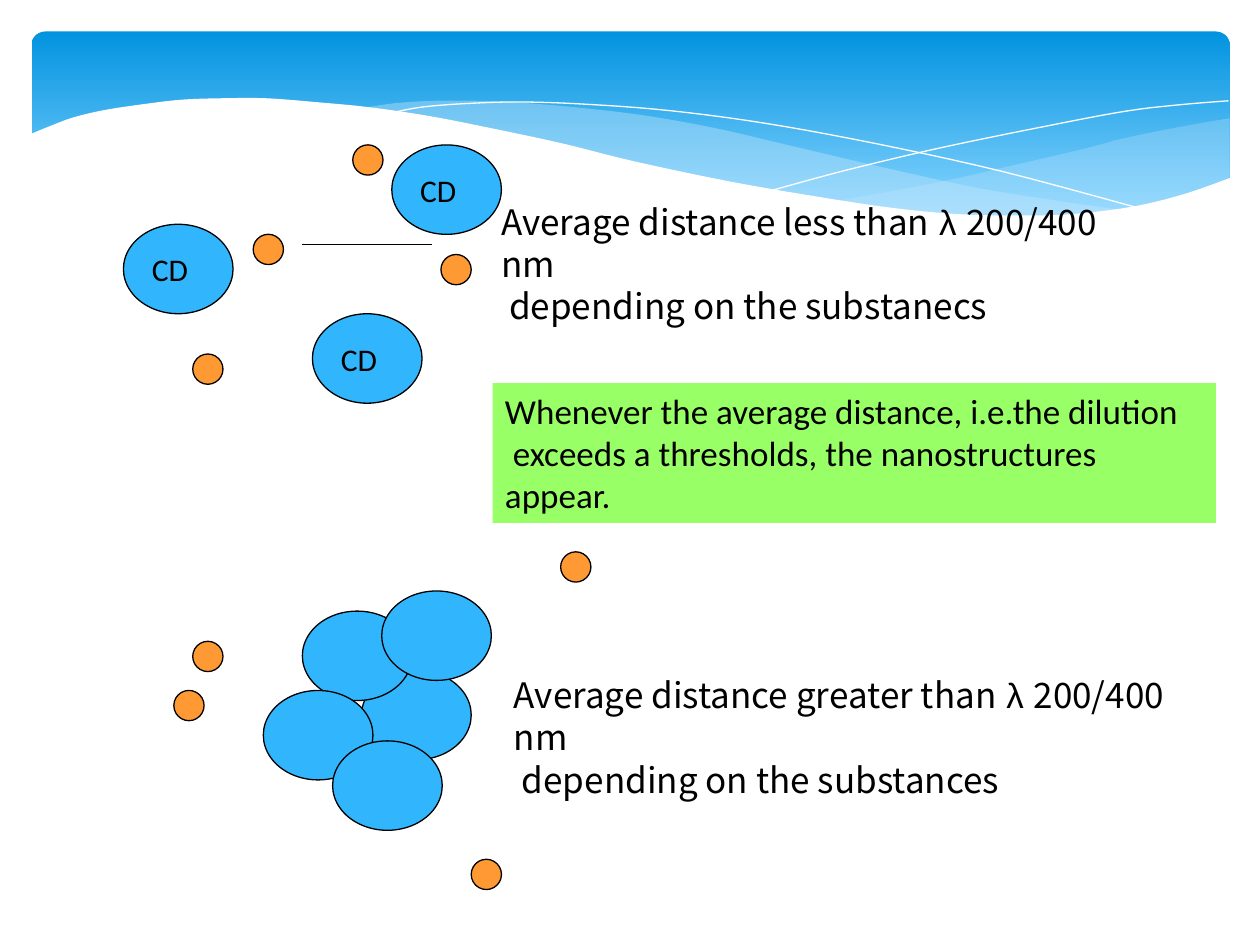
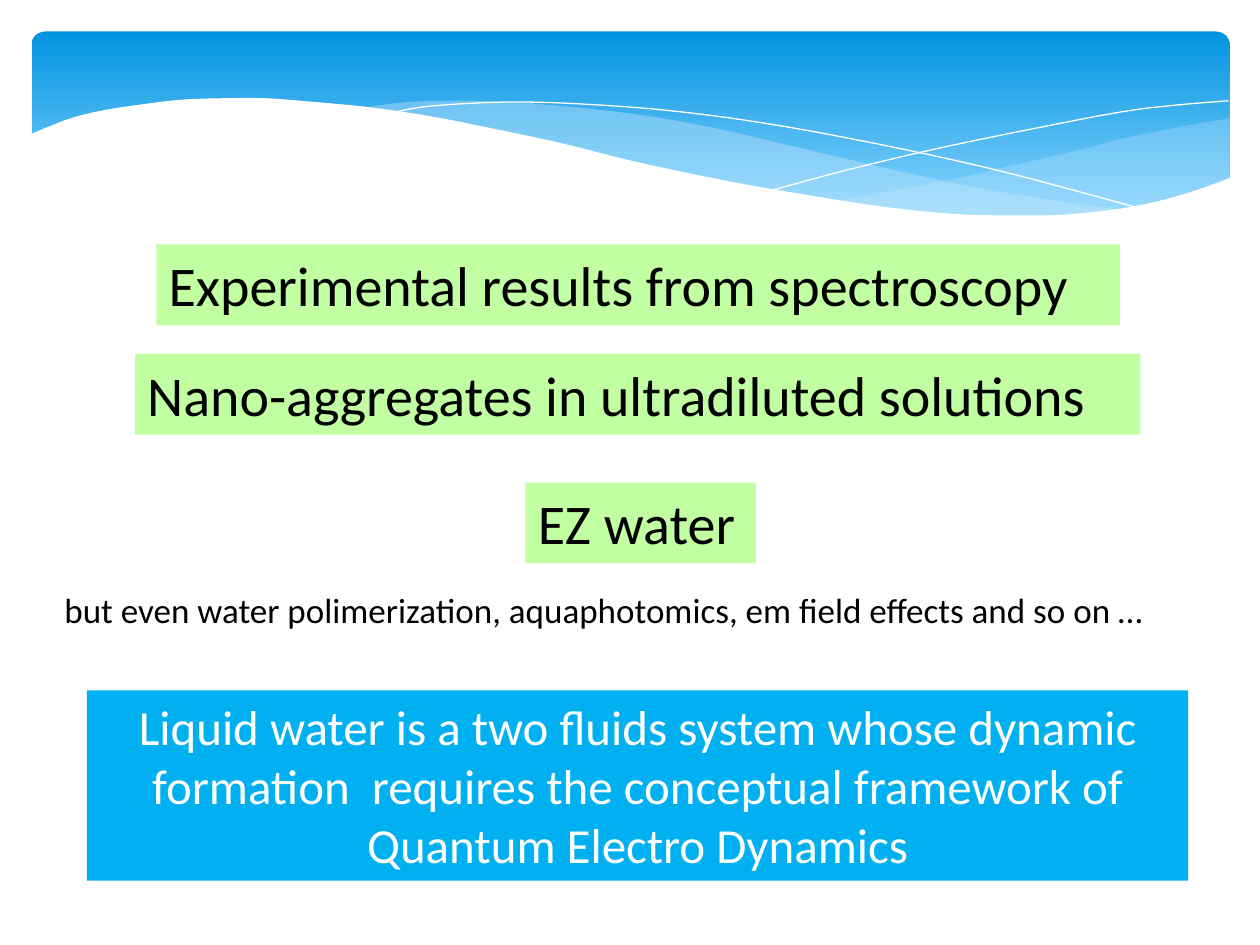
from collections import namedtuple
from lxml.etree import SubElement
from pptx import Presentation
from pptx.dml.color import RGBColor
from pptx.enum.shapes import MSO_CONNECTOR as Connector, MSO_SHAPE as Shape
from pptx.enum.text import MSO_ANCHOR as Anchor, PP_ALIGN as Align
from pptx.oxml.ns import qn
from pptx.util import Inches, Pt

WIDTH, HEIGHT = Inches(10), Inches(7.5)
COLUMN, ROW = WIDTH / 100, HEIGHT / 75
Box = namedtuple("Box", "left top width height")

BLACK, WHITE = "000000", "FFFFFF"
BAND_TOP, BAND_BOTTOM, WAVE = "0293E0", "83D3FE", "C6E7FC"
MOLECULE, DROPLET = "31B6FD", "FF9933"
BRIGHT_GREEN, PALE_GREEN, BLUE = "99FF66", "C2FFA3", "00B0F0"
BODY, DISTANCE_FONT, GREEK_FONT = "Calibri", "Noto Sans CJK JP", "Arial"

HEADER = Box(0, 0, 100, 22.4)
DILUTE = Box(9.8, 11.5, 30, 22.5)
CLUSTERED = Box(13.8, 43.8, 33, 27)
MOLECULE_SIZE, DROPLET_SIZE = (8.7, 7.1), (2.4, 2.4)

RIGHT_WAVE_TOP = [(97.5, 9.4), (93.5, 10.1), (89.1, 11), (86.1, 11.8), (80.5, 13.1),
                  (75.3, 14.3), (70.6, 15.2), (66.1, 16)]
RIGHT_WAVE_BOTTOM = [(66.1, 16), (70.5, 16.5), (75.7, 17), (80.3, 17.2), (84.4, 17.1),
                     (88.1, 16.7), (92.1, 16), (94.9, 15.2), (97.6, 14.1)]
LEFT_WAVE_TOP = [(89.3, 16.7), (83.7, 15.9), (77.5, 14.9), (70.6, 13.4), (62.9, 11.6),
                 (56.9, 10.2), (51.4, 9.2), (46.5, 8.6), (42, 8.2), (38, 8), (34.4, 8),
                 (31.3, 8.2), (28.6, 8.6)]
LEFT_WAVE_BOTTOM = [(28.6, 8.6), (32.3, 9), (38.3, 10.1), (44.9, 11.6), (53, 13.5),
                    (60.1, 15), (66.5, 16.1), (72.2, 16.8), (77.3, 17.2), (81.8, 17.3),
                    (85.7, 17.1), (89.3, 16.7)]
FALLING_LINE = [(30.9, 9), (33.5, 8.5), (37.4, 8.2), (41.6, 8.1), (46.9, 8.3),
                (53.3, 8.8), (60.8, 9.8), (69.5, 11.4), (79.5, 13.6), (90.7, 16.6)]
RISING_LINE = [(61.3, 15.1), (67.2, 13.5), (74.8, 11.7), (83.6, 9.9), (89.5, 8.8),
               (93.8, 8.3), (97.5, 8)]
PAGE_EDGE = [(97.7, 14.1), (94, 15.4), (89.9, 16.4), (85, 17), (80.9, 17.1), (76.1, 17),
             (70.8, 16.5), (64.8, 15.6), (57.9, 14.4), (50.3, 12.8), (44.7, 11.4),
             (39.1, 10.2), (34, 9.2), (29.2, 8.5), (25, 8.1), (21.1, 7.8), (17.7, 7.8),
             (14.6, 7.9), (11.9, 8.2), (8.5, 8.7), (5.9, 9.3), (4, 10), (2.3, 10.7)]


def color(value):
    return RGBColor.from_string(value)


def place(box, columns, rows):
    return round((box.left + columns) * COLUMN), round((box.top + rows) * ROW)


def extent(columns, rows):
    return round(columns * COLUMN), round(rows * ROW)


def paint(shape, fill=None, line=None, line_width=0.75, opacity=None):
    shape.shadow.inherit = False
    if fill:
        shape.fill.solid()
        shape.fill.fore_color.rgb = color(fill)
    else:
        shape.fill.background()
    if opacity:
        fill_color = next(shape._element.iter(qn("a:srgbClr")))
        SubElement(fill_color, qn("a:alpha"), val=str(opacity * 1000))
    if line:
        shape.line.color.rgb = color(line)
        shape.line.width = Pt(line_width)
    else:
        shape.line.fill.background()


def smooth(knots, steps=5):
    padded = [knots[0], *knots, knots[-1]]
    points = [knots[0]]
    for before, start, end, after in zip(padded, padded[1:], padded[2:], padded[3:]):
        for step in range(1, steps + 1):
            t = step / steps
            points.append(tuple(
                b + t / 2 * (c - a + t * (2 * a - 5 * b + 4 * c - d + t * (3 * b - a - 3 * c + d)))
                for a, b, c, d in zip(before, start, end, after)))
    return points


def draw_outline(slide, box, points, closed=True, **style):
    start, *rest = [place(box, *point) for point in points]
    builder = slide.shapes.build_freeform(*start, scale=1.0)
    builder.add_line_segments(rest, close=closed)
    paint(builder.convert_to_shape(), **style)


def draw_header(slide, box):
    band = slide.shapes.add_shape(
        Shape.ROUNDED_RECTANGLE, *place(box, 2.5, 2.5), *extent(95.1, 15.6))
    band.adjustments[0] = 0.07
    paint(band)
    band.fill.gradient()
    band.fill.gradient_angle = 270
    stops = zip(band.fill.gradient_stops, (0, 0.9), (BAND_TOP, BAND_BOTTOM))
    for stop, position, value in stops:
        stop.position = position
        stop.color.rgb = color(value)

    right_wave = smooth(RIGHT_WAVE_TOP) + smooth(RIGHT_WAVE_BOTTOM) + [(97.6, 9.4)]
    left_wave = smooth(LEFT_WAVE_TOP) + smooth(LEFT_WAVE_BOTTOM)
    draw_outline(slide, box, right_wave, fill=WAVE, opacity=29)
    draw_outline(slide, box, left_wave, fill=WAVE, opacity=40)
    for knots in (FALLING_LINE, RISING_LINE):
        draw_outline(slide, box, smooth(knots), closed=False, line=WHITE, line_width=0)
    page = smooth(PAGE_EDGE) + [(2.3, box.height), (97.7, box.height)]
    draw_outline(slide, box, page, fill=WHITE)


def write(shape, lines, size, font=BODY, text_color=BLACK, align=Align.LEFT,
          anchor=Anchor.TOP, spacing=None):
    frame = shape.text_frame
    frame.word_wrap = True
    frame.vertical_anchor = anchor
    for index, line in enumerate(lines):
        paragraph = frame.paragraphs[0] if index == 0 else frame.add_paragraph()
        paragraph.alignment = align
        paragraph.line_spacing = spacing
        paragraph.font.size = Pt(size)
        paragraph.font.name = font
        paragraph.font.color.rgb = color(text_color)
        for part in line.partition(" λ "):
            if part:
                run = paragraph.add_run()
                run.text = part
                if part == " λ ":
                    run.font.name = GREEK_FONT


def add_panel(slide, box, lines, size, fill=None, **style):
    frame = (*place(box, 0, 0), *extent(box.width, box.height))
    if fill:
        panel = slide.shapes.add_shape(Shape.RECTANGLE, *frame)
        paint(panel, fill)
    else:
        panel = slide.shapes.add_textbox(*frame)
    write(panel, lines, size, **style)


def add_ellipses(slide, box, offsets, size, fill, label=None):
    for offset in offsets:
        ellipse = slide.shapes.add_shape(Shape.OVAL, *place(box, *offset), *extent(*size))
        paint(ellipse, fill, BLACK)
        if label:
            write(ellipse, [label], 18, anchor=Anchor.MIDDLE)


def draw_dilute_solution(slide, box):
    droplets = [(10.3, 7.1), (18.2, 0), (25.2, 8.7), (5.5, 16.6)]
    add_ellipses(slide, box, droplets, DROPLET_SIZE, DROPLET)
    distance = slide.shapes.add_connector(
        Connector.STRAIGHT, *place(box, 14.2, 7.9), *place(box, 24.5, 7.9))
    distance.line.color.rgb = color(BLACK)
    distance.line.width = Pt(0.75)
    SubElement(distance._element.spPr, qn("a:effectLst"))
    molecules = [(15, 13.4), (0, 6.3), (21.3, 0)]
    add_ellipses(slide, box, molecules, MOLECULE_SIZE, MOLECULE, "CD")


def draw_cluster(slide, box):
    droplets = [(0, 11), (30.7, 0), (1.5, 7.1), (23.6, 24.4)]
    add_ellipses(slide, box, droplets, DROPLET_SIZE, DROPLET)
    molecules = [(14.9, 9.4), (10.2, 4.7), (7.1, 11), (12.6, 15), (16.5, 3.1)]
    add_ellipses(slide, box, molecules, MOLECULE_SIZE, MOLECULE)


def new_slide(presentation):
    slide = presentation.slides.add_slide(presentation.slide_layouts[6])
    draw_header(slide, HEADER)
    return slide


def build_distance_slide(presentation):
    slide = new_slide(presentation)
    distance_style = dict(size=20, font=DISTANCE_FONT, spacing=Pt(24))
    add_panel(slide, Box(38.8, 15.4, 52.9, 7.7),
              ["Average distance less than λ 200/400 nm", " depending on the substanecs"],
              **distance_style)
    draw_dilute_solution(slide, DILUTE)
    draw_cluster(slide, CLUSTERED)
    add_panel(slide, Box(39.8, 53, 56.8, 7.7),
              ["Average distance greater than λ 200/400 nm", " depending on the substances"],
              fill=WHITE, **distance_style)
    add_panel(slide, Box(39.1, 30.4, 57.4, 11.1),
              ["Whenever the average distance, i.e.the dilution",
               " exceeds a thresholds, the nanostructures", "appear."],
              20, BRIGHT_GREEN)


def build_results_slide(presentation):
    slide = new_slide(presentation)
    topics = [
        (Box(12.4, 19.4, 76.5, 6.4), "Experimental results from spectroscopy"),
        (Box(10.7, 28.1, 79.8, 6.4), "Nano-aggregates in ultradiluted solutions"),
        (Box(41.7, 38.3, 18.3, 6.4), "EZ water"),
    ]
    for box, topic in topics:
        add_panel(slide, box, [topic], 32, PALE_GREEN)
    add_panel(slide, Box(3.5, 46.2, 94.5, 4.4),
              [" but even water polimerization, aquaphotomics, em field effects and so on …"], 20)
    add_panel(slide, Box(6.9, 54.8, 87.4, 15.1),
              ["Liquid water is a two fluids system whose dynamic formation  requires "
               "the conceptual framework of Quantum Electro Dynamics"],
              28, BLUE, text_color=WHITE, align=Align.CENTER)


def main():
    presentation = Presentation()
    presentation.slide_width, presentation.slide_height = WIDTH, HEIGHT
    build_distance_slide(presentation)
    build_results_slide(presentation)
    presentation.save("out.pptx")


if __name__ == "__main__":
    main()
